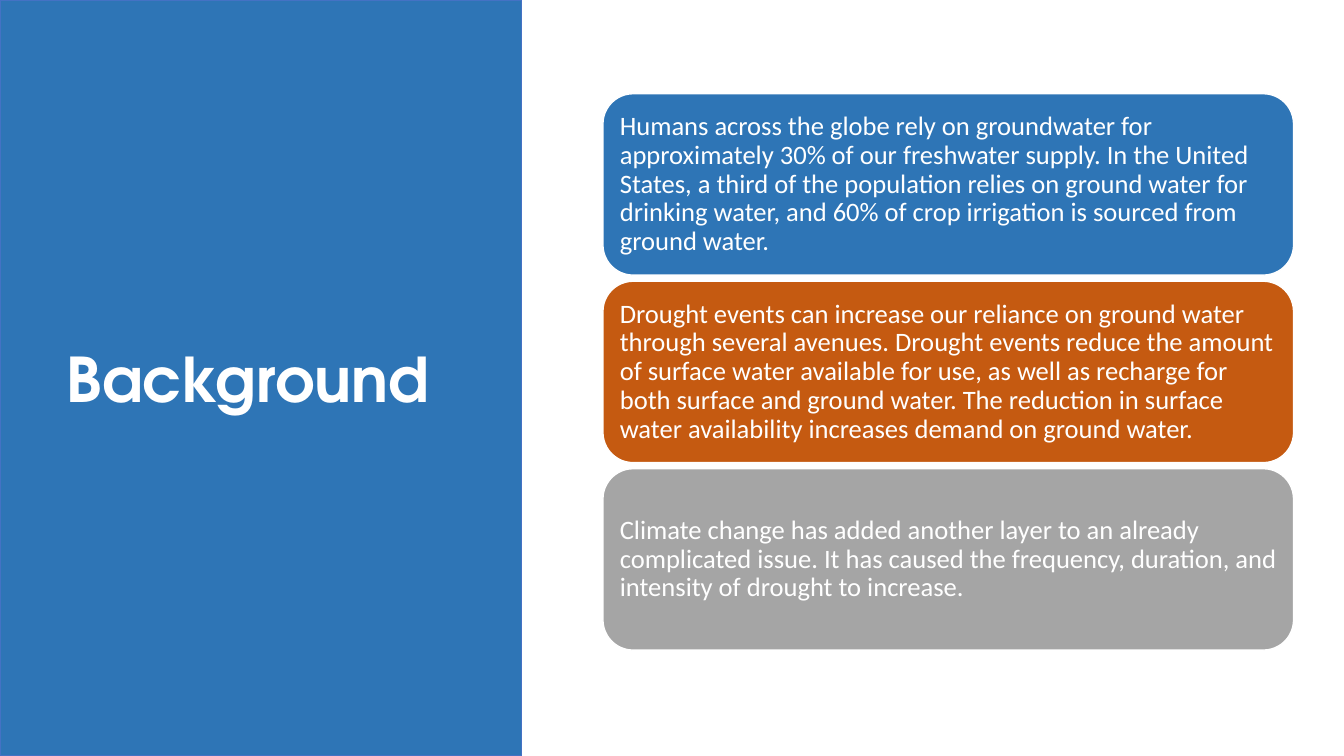
from pptx import Presentation
from pptx.dml.color import RGBColor
from pptx.enum import shapes, text
from pptx.util import Inches, Pt


def shade(code):
    return RGBColor.from_string(code)


class Deck:
    white = "FFFFFF"
    blue = "2E75B6"

    def __init__(self, slide):
        self.slide = slide

    def block(self, kind, place, fill, line):
        shape = self.slide.shapes.add_shape(kind, *map(Inches, place))
        shape.shadow.inherit = False
        shape.fill.solid()
        shape.fill.fore_color.rgb = shade(fill)
        shape.line.color.rgb = shade(line)
        shape.line.width = Pt(1)
        return shape

    def label(self, frame, words, face, size, bold=False):
        frame.word_wrap = True
        para = frame.paragraphs[0]
        para.text = words
        para.alignment = text.PP_ALIGN.LEFT
        para.font.name = face
        para.font.size = Pt(size)
        para.font.bold = bold
        para.font.color.rgb = shade(self.white)
        return para

    def panel(self, place):
        self.block(shapes.MSO_SHAPE.RECTANGLE, place, self.blue, "4472C4")

    def title(self, place, words):
        box = self.slide.shapes.add_textbox(*map(Inches, place))
        self.label(box.text_frame, words, "TeX Gyre Adventor", 44, True)

    def card(self, place, fill, words):
        shape = self.block(shapes.MSO_SHAPE.ROUNDED_RECTANGLE, place, fill, self.white)
        frame = shape.text_frame
        frame.margin_left = frame.margin_right = Inches(0.08)
        frame.margin_top = frame.margin_bottom = Inches(0.08)
        frame.vertical_anchor = text.MSO_ANCHOR.MIDDLE
        self.label(frame, words, "Calibri", 19).line_spacing = 0.9


def main():
    prs = Presentation()
    prs.slide_width, prs.slide_height = Inches(13.33), Inches(7.5)
    deck = Deck(prs.slides.add_slide(prs.slide_layouts[6]))
    cards = [
        (deck.blue, "Humans across the globe rely on groundwater for approximately 30% of our "
         "freshwater supply. In the United States, a third of the population relies on ground "
         "water for drinking water, and 60% of crop irrigation is sourced from ground water."),
        ("C55A11", "Drought events can increase our reliance on ground water through several "
         "avenues. Drought events reduce the amount of surface water available for use, as well "
         "as recharge for both surface and ground water. The reduction in surface water "
         "availability increases demand on ground water."),
        ("A5A5A5", "Climate change has added another layer to an already complicated issue. It "
         "has caused the frequency, duration, and intensity of drought to increase."),
    ]
    for row, (fill, words) in enumerate(cards):
        deck.card((5.98, 0.93 + 1.86 * row, 6.85, 1.8), fill, words)
    deck.panel((0, 0, 5.17, 7.5))
    deck.title((0.56, 3.33, 4.74, 0.84), "Background")
    prs.save("out.pptx")


if __name__ == "__main__":
    main()
